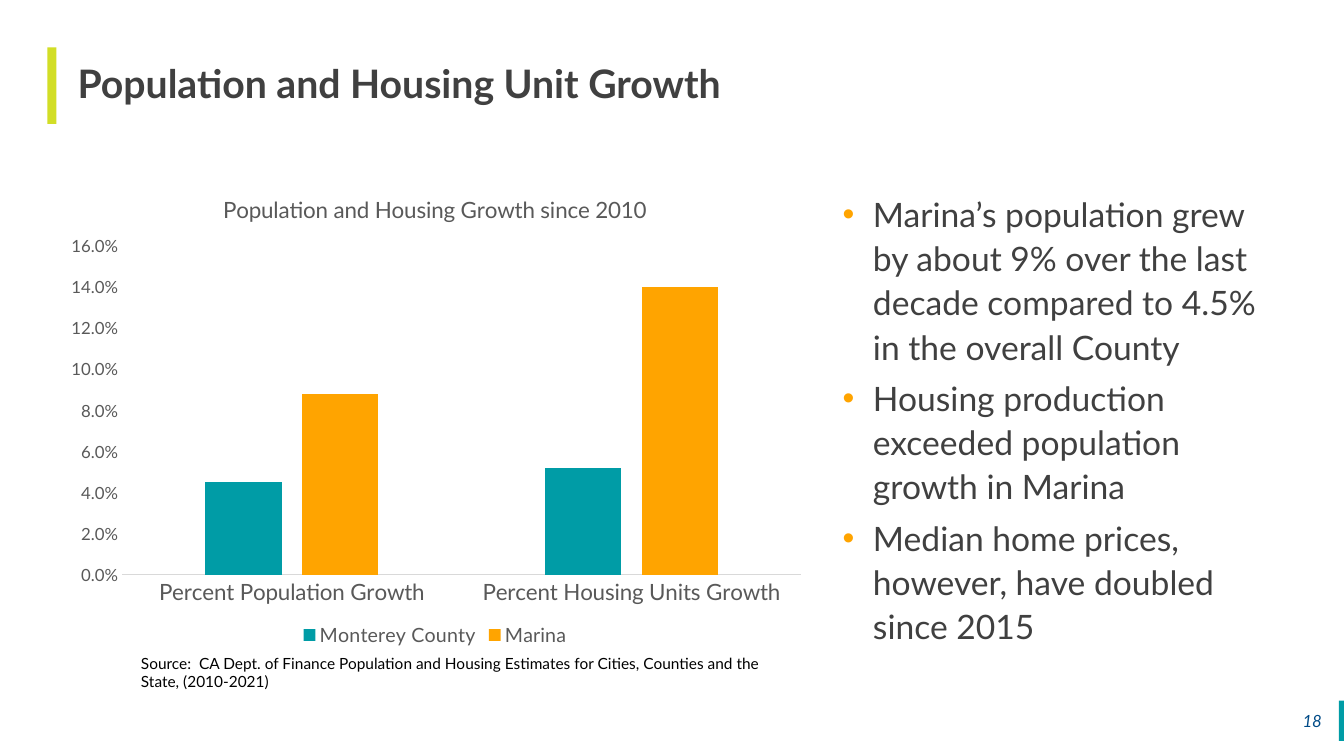
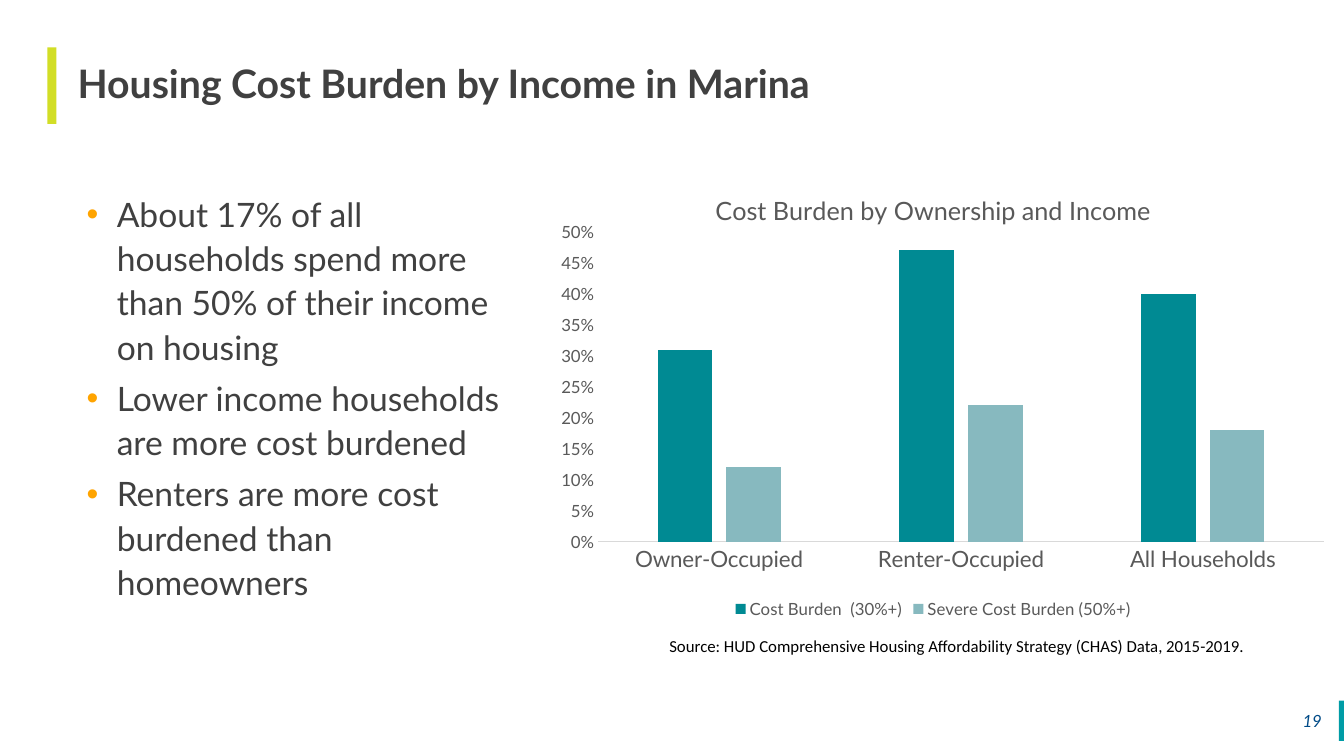
import pptx
import pptx.chart.data
import pptx.dml.color
import pptx.enum.chart
import pptx.enum.shapes
import pptx.enum.text
import pptx.oxml
import pptx.oxml.ns
import pptx.util
from pptx.util import Inches

TEAL, LIME, ORANGE, NAVY = "009CA6", "D2DE26", "FFA400", "004B87"
DARK, GRAY, RULE, BLACK = "404040", "595959", "D9D9D9", "000000"
PP_ALIGN = pptx.enum.text.PP_ALIGN
ANCHOR = pptx.enum.text.MSO_ANCHOR


def rgb(value):
    return pptx.dml.color.RGBColor.from_string(value)


def style_font(font, color, **values):
    """Set font attributes from a dict, with Lato as the default face."""
    for name, value in {"name": "Lato", "bold": False, **values}.items():
        setattr(font, name, pptx.util.Pt(value) if name == "size" else value)
    font.color.rgb = rgb(color)


def add_bullet(p, color):
    """Give a paragraph a coloured round bullet with a hanging indent."""
    pPr = p._p.get_or_add_pPr()
    pPr.set("marL", str(Inches(0.59)))
    pPr.set("indent", str(Inches(-0.3)))
    ns = pptx.oxml.ns.nsdecls("a")
    for xml in (
        f'<a:buClr {ns}><a:srgbClr val="{color}"/></a:buClr>',
        f'<a:buFont {ns} typeface="Arial"/>',
        f'<a:buChar {ns} char="•"/>',
    ):
        pPr.append(pptx.oxml.parse_xml(xml))


def set_plot_area(chart, box):
    """Fix the inner plot area; box holds x, y, w, h as shares of the chart."""
    plot = chart._chartSpace.chart.plotArea
    for old in plot.findall(pptx.oxml.ns.qn("c:layout")):
        plot.remove(old)
    sizes = "".join(f'<c:{k} val="{v}"/>' for k, v in zip("xywh", box))
    plot.insert(0, pptx.oxml.parse_xml(
        f'<c:layout {pptx.oxml.ns.nsdecls("c")}><c:manualLayout>'
        '<c:layoutTarget val="inner"/><c:xMode val="edge"/><c:yMode val="edge"/>'
        f'{sizes}</c:manualLayout></c:layout>'))


class Deck:
    def __init__(self):
        self.prs = pptx.Presentation()
        self.prs.slide_width = Inches(13.33)
        self.prs.slide_height = Inches(7.5)
        self.s = None

    def new_slide(self, title, number):
        self.s = self.prs.slides.add_slide(self.prs.slide_layouts[5])
        self.bar(13.28, 6.95, 0.05, 0.4, TEAL)
        self.bar(0.47, 0.47, 0.09, 0.76, LIME)
        self.title(title)
        self.text(str(number), 12.8, 6.95, 0.41, 0.4, NAVY, align=PP_ALIGN.RIGHT,
                  anchor=ANCHOR.MIDDLE, size=12, italic=True)

    def bar(self, x, y, w, h, color):
        sp = self.s.shapes.add_shape(pptx.enum.shapes.MSO_SHAPE.RECTANGLE,
                                     Inches(x), Inches(y), Inches(w), Inches(h))
        sp.shadow.inherit = False
        sp.fill.solid()
        sp.fill.fore_color.rgb = rgb(color)
        sp.line.fill.background()

    def title(self, text):
        sp = self.s.shapes.title
        sp.left, sp.top, sp.width, sp.height = map(Inches, (0.57, 0.47, 12.31, 0.76))
        tf = sp.text_frame
        frame = {"margin_left": Inches(0.2), "margin_right": 0, "margin_top": 0,
                 "margin_bottom": 0, "vertical_anchor": ANCHOR.MIDDLE,
                 "word_wrap": True, "auto_size": pptx.enum.text.MSO_AUTO_SIZE.NONE}
        for name, value in frame.items():
            setattr(tf, name, value)
        p = tf.paragraphs[0]
        p.text, p.alignment, p.line_spacing = text, PP_ALIGN.LEFT, 0.9
        style_font(p.runs[0].font, DARK, size=28, bold=True)

    def text_frame(self, x, y, w, h):
        tf = self.s.shapes.add_textbox(Inches(x), Inches(y), Inches(w), Inches(h)).text_frame
        tf.word_wrap = True
        return tf

    def text(self, text, x, y, w, h, color, align=PP_ALIGN.LEFT, anchor=ANCHOR.TOP, **font):
        tf = self.text_frame(x, y, w, h)
        tf.vertical_anchor = anchor
        p = tf.paragraphs[0]
        p.text, p.alignment = text, align
        style_font(p.runs[0].font, color, **font)

    def bullets(self, items, x):
        tf = self.text_frame(x, 1.83, 4.83, 4.88)
        for i, item in enumerate(items):
            p = tf.add_paragraph() if i else tf.paragraphs[0]
            p.line_spacing = 1.1
            if i:
                p.space_before = pptx.util.Pt(5)
            add_bullet(p, ORANGE)
            p.text = item
            style_font(p.runs[0].font, DARK, size=24)

    def column_chart(self, title, box, plot_box, categories, series,
                     number_format, title_size, legend_size):
        """Draw clustered columns; series holds (name, values, colour) rows."""
        data = pptx.chart.data.CategoryChartData(number_format=number_format)
        data.categories = categories
        for name, values, _ in series:
            data.add_series(name, values)
        chart = self.s.shapes.add_chart(pptx.enum.chart.XL_CHART_TYPE.COLUMN_CLUSTERED,
                                        *map(Inches, box), data).chart
        style_font(chart.font, BLACK, size=10)
        set_plot_area(chart, plot_box)

        chart.has_title = True
        chart.chart_title.include_in_layout = False
        p = chart.chart_title.text_frame.paragraphs[0]
        p.text = title
        style_font(p.runs[0].font, GRAY, size=title_size)

        chart.has_legend = True
        chart.legend.position = pptx.enum.chart.XL_LEGEND_POSITION.BOTTOM
        chart.legend.include_in_layout = False
        style_font(chart.legend.font, GRAY, size=legend_size)

        for axis, size in ((chart.category_axis, 16), (chart.value_axis, 12)):
            axis.has_major_gridlines = False
            axis.major_tick_mark = pptx.enum.chart.XL_TICK_MARK.NONE
            axis.minor_tick_mark = pptx.enum.chart.XL_TICK_MARK.NONE
            style_font(axis.tick_labels.font, GRAY, size=size)
        line = chart.category_axis.format.line
        line.color.rgb = rgb(RULE)
        line.width = pptx.util.Pt(0.75)
        chart.value_axis.format.line.fill.background()
        chart.value_axis.tick_labels.number_format = number_format
        chart.value_axis.tick_labels.number_format_is_linked = False

        plot = chart.plots[0]
        plot.gap_width, plot.overlap, plot.vary_by_categories = 219, -27, False
        for ser, (_, _, color) in zip(plot.series, series):
            ser.format.fill.solid()
            ser.format.fill.fore_color.rgb = rgb(color)


def growth_slide(deck):
    deck.new_slide("Population and Housing Unit Growth", 18)
    deck.bullets([
        "Marina’s population grew by about 9% over the last decade compared to 4.5% "
        "in the overall County",
        "Housing production exceeded population growth in Marina",
        "Median home prices, however, have doubled since 2015",
    ], 7.97)
    deck.column_chart(
        "Population and Housing Growth since 2010",
        (0.53, 1.73, 7.57, 4.73), (0.09, 0.15, 0.89, 0.69),
        ["Percent Population Growth", "Percent Housing Units Growth"],
        [("Monterey County", (0.045, 0.052), TEAL), ("Marina", (0.088, 0.14), ORANGE)],
        "0.0%", title_size=16, legend_size=14)
    deck.text("Source:  CA Dept. of Finance Population and Housing Estimates for Cities, "
              "Counties and the State, (2010-2021)", 1.3, 6.44, 6.67, 0.47, BLACK, size=11)


def cost_burden_slide(deck):
    deck.new_slide("Housing Cost Burden by Income in Marina", 19)
    deck.column_chart(
        "Cost Burden by Ownership and Income",
        (5.3, 1.72, 7.91, 4.46), (0.08, 0.13, 0.91, 0.69),
        ["Owner-Occupied", "Renter-Occupied", "All Households"],
        [("Cost Burden  (30%+)", (0.31, 0.47, 0.4), "008A93"),
         ("Severe Cost Burden (50%+)", (0.12, 0.22, 0.18), "87B9BF")],
        "0%", title_size=18, legend_size=12)
    deck.bullets([
        "About 17% of all households spend more than 50% of their income on housing",
        "Lower income households are more cost burdened",
        "Renters are more cost burdened than homeowners",
    ], 0.47)
    deck.text("Source: HUD Comprehensive Housing Affordability Strategy (CHAS) Data, "
              "2015-2019.", 6.54, 6.26, 6.67, 0.3, BLACK, size=12, name="Calibri")


def main():
    deck = Deck()
    growth_slide(deck)
    cost_burden_slide(deck)
    deck.prs.save("out.pptx")


if __name__ == "__main__":
    main()
